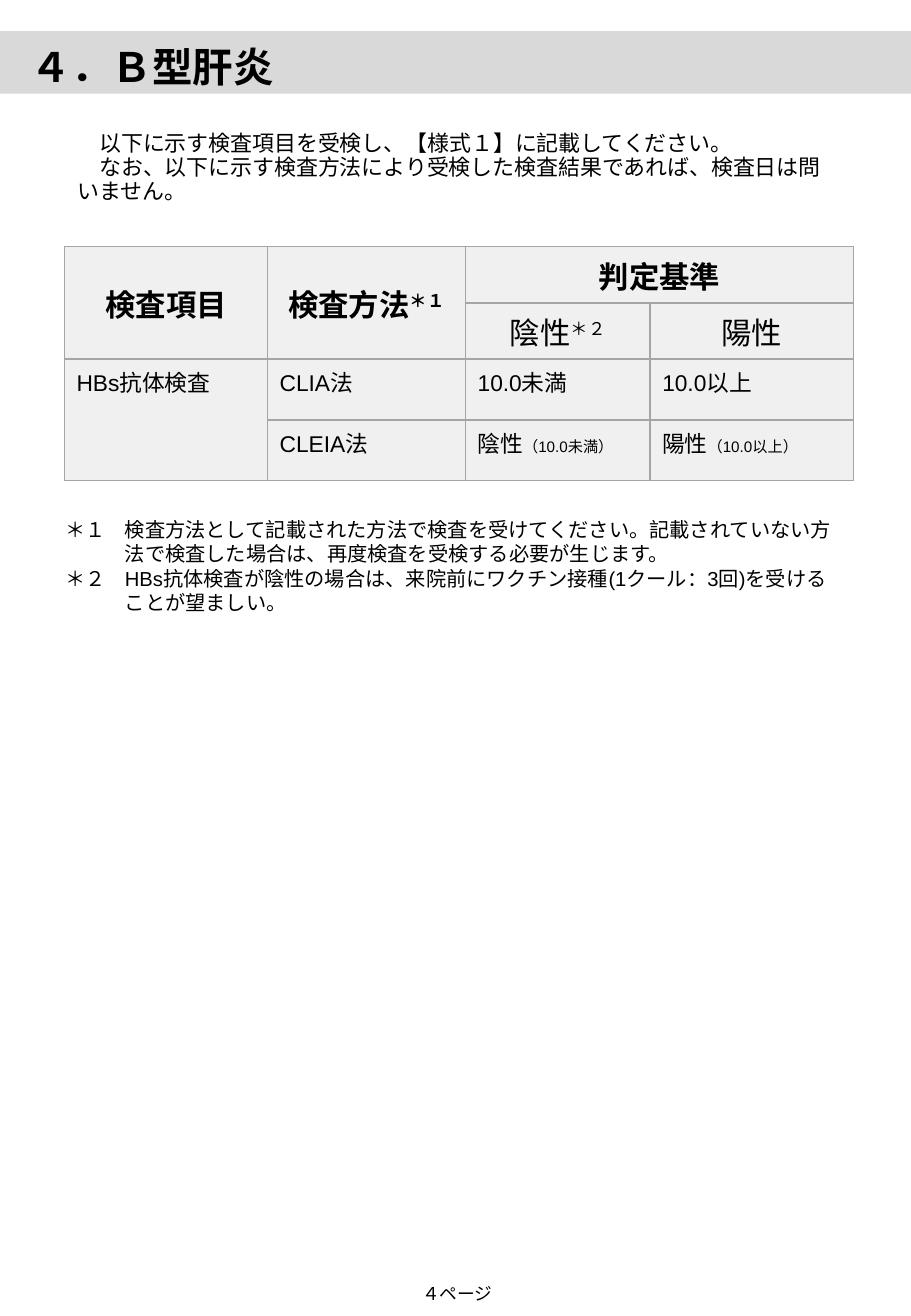
from lxml import etree
from pptx import Presentation
from pptx.dml.color import RGBColor
from pptx.enum import shapes, text
from pptx.oxml import ns
from pptx.util import Pt

EAST_ASIAN = "Noto Sans CJK JP"
CENTER, LEFT = text.PP_ALIGN.CENTER, text.PP_ALIGN.LEFT
MIDDLE, TOP = text.MSO_ANCHOR.MIDDLE, text.MSO_ANCHOR.TOP
INTRO = ["\u3000以下に示す検査項目を受検し、【様式１】に記載してください。",
         "\u3000なお、以下に示す検査方法により受検した検査結果であれば、検査日は問いません。"]
FOOTNOTES = [
    "＊１\t検査方法として記載された方法で検査を受けてください。記載されていない方法で検査した場合は、再度検査を受検する必要が生じます。",
    "＊２\tHBs抗体検査が陰性の場合は、来院前にワクチン接種(1クール：3回)を受けることが望ましい。"]
HEADERS = [(0, 0, "検査項目", "", True), (0, 1, "検査方法", "＊１", True),
           (0, 2, "判定基準", "", True), (1, 2, "陰性", "＊２", False),
           (1, 3, "陽性", "", False)]
RESULTS = [(2, 0, "HBs抗体検査", ""), (2, 1, "CLIA法", ""),
           (2, 2, "10.0未満", ""), (2, 3, "10.0以上", ""),
           (3, 1, "CLEIA法", ""), (3, 2, "陰性", "（10.0未満）"),
           (3, 3, "陽性", "（10.0以上）")]
MERGES = [(0, 0, 1, 0), (0, 1, 1, 1), (0, 2, 0, 3), (2, 0, 3, 0)]


def color(value):
    return RGBColor.from_string(value)


def format_paragraph(paragraph, size, bold=False, align=LEFT, name="Arial"):
    paragraph.alignment = align
    font = paragraph.font
    font.size, font.bold, font.name = Pt(size), bold, name
    font.color.rgb = color("000000")
    east_asian = etree.SubElement(font._element, ns.qn("a:ea"))
    east_asian.set("typeface", EAST_ASIAN)


def fill_text(shape, lines, size, anchor=TOP, **style):
    frame = shape.text_frame
    frame.word_wrap = True
    frame.auto_size = text.MSO_AUTO_SIZE.NONE
    frame.vertical_anchor = anchor
    frame.text = "\n".join(lines)
    for paragraph in frame.paragraphs:
        format_paragraph(paragraph, size, **style)
    return frame.paragraphs


def add_text(slide, box, lines, size, **style):
    shape = slide.shapes.add_textbox(*map(Pt, box))
    return fill_text(shape, lines, size, **style)


def add_heading(slide):
    bar = slide.shapes.add_shape(shapes.MSO_SHAPE.RECTANGLE, Pt(-13.5), Pt(18.5), Pt(570), Pt(37))
    bar.shadow.inherit = False
    bar.fill.solid()
    bar.fill.fore_color.rgb = color("D9D9D9")
    bar.line.fill.background()
    slide.shapes._spTree.insert(2, bar._element)
    title = slide.shapes.title
    title.left, title.top, title.width, title.height = map(Pt, (11, 21, 415, 36))
    fill_text(title, ["４．Ｂ型肝炎"], 24, bold=True)


def style_cell(cell):
    cell.fill.solid()
    cell.fill.fore_color.rgb = color("F0F0F0")
    properties = cell._tc.get_or_add_tcPr()
    for index, side in enumerate(("lnL", "lnR", "lnT", "lnB")):
        line = etree.Element(ns.qn(f"a:{side}"), w=str(Pt(1)))
        fill = etree.SubElement(line, ns.qn("a:solidFill"))
        etree.SubElement(fill, ns.qn("a:srgbClr"), val="A5A5A5")
        properties.insert(index, line)


def write_cell(cell, label, suffix, size, **style):
    paragraph = cell.text_frame.paragraphs[0]
    format_paragraph(paragraph, size, **style)
    paragraph.add_run().text = label
    if not suffix:
        return None
    run = paragraph.add_run()
    run.text = suffix
    return run


def add_criteria_table(slide):
    frame = slide.shapes.add_table(4, 4, Pt(38.2), Pt(146.2), Pt(468), Pt(122.4))
    table = frame.table
    table.first_row = table.horz_banding = False
    for column, width in zip(table.columns, (120.4, 117.4, 109.4, 120.6)):
        column.width = Pt(width)
    for row, height in zip(table.rows, (25.2, 25.2, 36, 36)):
        row.height = Pt(height)
    for cell in table.iter_cells():
        style_cell(cell)
    for top, left, bottom, right in MERGES:
        table.cell(top, left).merge(table.cell(bottom, right))
    for row, column, label, mark, bold in HEADERS:
        cell = table.cell(row, column)
        cell.vertical_anchor = MIDDLE
        run = write_cell(cell, label, mark, 18, bold=bold, align=CENTER, name="Calibri")
        if run:
            run.font._element.set("baseline", "30000")
    for row, column, label, limit in RESULTS:
        run = write_cell(table.cell(row, column), label, limit, 13.5)
        if run:
            run.font.size = Pt(9)


def add_footnotes(slide):
    for paragraph in add_text(slide, (31.7, 303, 473, 65.5), FOOTNOTES, 12):
        properties = paragraph._p.get_or_add_pPr()
        properties.set("marL", str(Pt(35.3)))
        properties.set("indent", str(Pt(-35.3)))


def main():
    """Build the hepatitis B test page and save it."""
    presentation = Presentation()
    presentation.slide_width, presentation.slide_height = Pt(540), Pt(779.76)
    slide = presentation.slides.add_slide(presentation.slide_layouts[5])
    add_heading(slide)
    for paragraph in add_text(slide, (38.9, 53.3, 465.8, 92.9), INTRO, 13, anchor=MIDDLE):
        paragraph.line_spacing = 0.9
    add_criteria_table(slide)
    add_footnotes(slide)
    add_text(slide, (191.5, 756.7, 159, 20), ["４ページ"], 10.5, align=CENTER)
    presentation.save("out.pptx")


if __name__ == "__main__":
    main()
